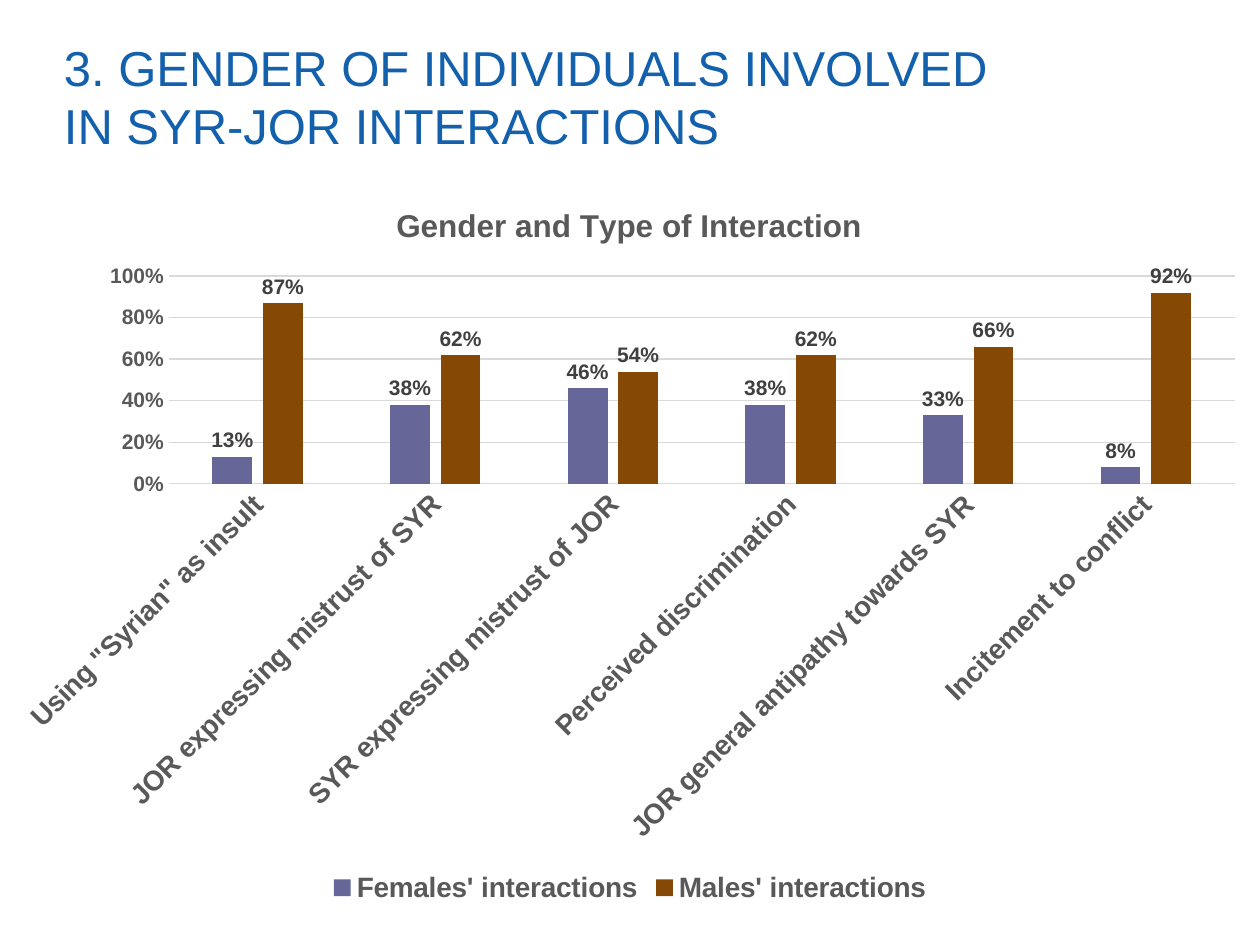
from lxml.etree import SubElement
from pptx import Presentation
from pptx.chart.data import CategoryChartData
from pptx.dml.color import RGBColor
from pptx.enum.chart import (XL_CHART_TYPE, XL_LABEL_POSITION,
                             XL_LEGEND_POSITION, XL_TICK_MARK)
from pptx.enum.text import MSO_ANCHOR
from pptx.oxml.ns import qn
from pptx.util import Inches, Pt

GREY, RULE = "595959", "D9D9D9"
TYPES = ['Using "Syrian" as insult', "JOR expressing mistrust of SYR",
         "SYR expressing mistrust of JOR", "Perceived discrimination",
         "JOR general antipathy towards SYR", "Incitement to conflict"]
SERIES = [
    ("Females' interactions", "666699", [0.13, 0.38, 0.46, 0.38, 0.33, 0.08]),
    ("Males' interactions", "864905", [0.87, 0.62, 0.54, 0.62, 0.66, 0.92]),
]


def color(code):
    return RGBColor.from_string(code)


def style(font, size, code, bold=True):
    values = {"name": "Arial", "size": Pt(size), "bold": bold}
    for key, value in values.items():
        setattr(font, key, value)
    font.color.rgb = color(code)


def rule(line):
    line.color.rgb = color(RULE)
    line.width = Pt(0.75)


def add_title(slide, box):
    frame = slide.shapes.add_textbox(*map(Inches, box)).text_frame
    frame.word_wrap = True
    frame.vertical_anchor = MSO_ANCHOR.MIDDLE
    para = frame.paragraphs[0]
    para.line_spacing = 0.99
    run = para.add_run()
    run.text = "3. GENDER OF INDIVIDUALS INVOLVED IN SYR-JOR INTERACTIONS"
    style(run.font, 28, "1360AD", False)


def place(part, spot, index, box, modes):
    # Fix a chart part at a spot in inches, stored as shares of the chart box
    for old in part.findall(qn("c:layout")):
        part.remove(old)
    layout = SubElement(part, qn("c:layout"))
    part.insert(index, layout)
    manual = SubElement(layout, qn("c:manualLayout"))
    shares = [inch / side for inch, side in zip(spot, box[2:] * 2)]
    for tag, value in modes + list(zip("xywh", shares)):
        SubElement(manual, qn("c:" + tag)).set("val", str(value))


def style_axes(chart):
    # Category axis with slanted labels
    cat = chart.category_axis
    style(cat.tick_labels.font, 16, GREY)
    rule(cat.format.line)
    props = cat._element.find(qn("c:txPr")).find(qn("a:bodyPr"))
    props.set("rot", "-2700000")
    props.set("vert", "horz")
    # Value axis in percent
    val = chart.value_axis
    style(val.tick_labels.font, 12, GREY)
    val.format.line.fill.background()
    rule(val.major_gridlines.format.line)
    limits = {"minimum_scale": 0, "maximum_scale": 1, "major_unit": 0.2}
    for key, value in limits.items():
        setattr(val, key, value)
    val.tick_labels.number_format = "0%"
    val.tick_labels.number_format_is_linked = False
    for axis in (cat, val):
        axis.major_tick_mark = axis.minor_tick_mark = XL_TICK_MARK.NONE


def add_bars(slide, box):
    data = CategoryChartData(number_format="0%")
    data.categories = TYPES
    for name, _, shares in SERIES:
        data.add_series(name, shares)
    chart = slide.shapes.add_chart(
        XL_CHART_TYPE.COLUMN_CLUSTERED, *map(Inches, box), data).chart
    style(chart.font, 10, "000000", False)

    # Chart title
    chart.has_title = True
    run = chart.chart_title.text_frame.paragraphs[0].add_run()
    run.text = "Gender and Type of Interaction"
    style(run.font, 18, GREY)
    chart.chart_title.include_in_layout = False

    # Legend
    chart.has_legend = True
    chart.legend.position = XL_LEGEND_POSITION.BOTTOM
    chart.legend.include_in_layout = False
    style(chart.legend.font, 16, GREY)

    # Columns and their labels
    plot = chart.plots[0]
    for key, value in {"gap_width": 219, "overlap": -27,
                       "vary_by_categories": False}.items():
        setattr(plot, key, value)
    for series, (_, code, _) in zip(plot.series, SERIES):
        series.format.fill.solid()
        series.format.fill.fore_color.rgb = color(code)
        series.invert_if_negative = False
        labels = series.data_labels
        for key, value in {"show_value": True, "number_format": "0%",
                           "number_format_is_linked": False,
                           "position": XL_LABEL_POSITION.OUTSIDE_END}.items():
            setattr(labels, key, value)
        style(labels.font, 12, "404040")

    style_axes(chart)
    # Positions of the chart title and the inner plot area
    edge = [("xMode", "edge"), ("yMode", "edge")]
    place(chart.chart_title._element, (3.1, 0.14), 1, box, edge)
    place(chart._chartSpace.chart.plotArea, (1.34, 0.75, 8.46, 1.65), 0, box,
          [("layoutTarget", "inner")] + edge)


def main():
    deck = Presentation()
    deck.slide_width, deck.slide_height = Inches(10), Inches(7.5)
    slide = deck.slides.add_slide(deck.slide_layouts[6])
    add_title(slide, (0.41, 0.19, 7.97, 1.18))
    add_bars(slide, (0, 1.44, 10, 5.77))
    deck.save("out.pptx")


if __name__ == "__main__":
    main()
